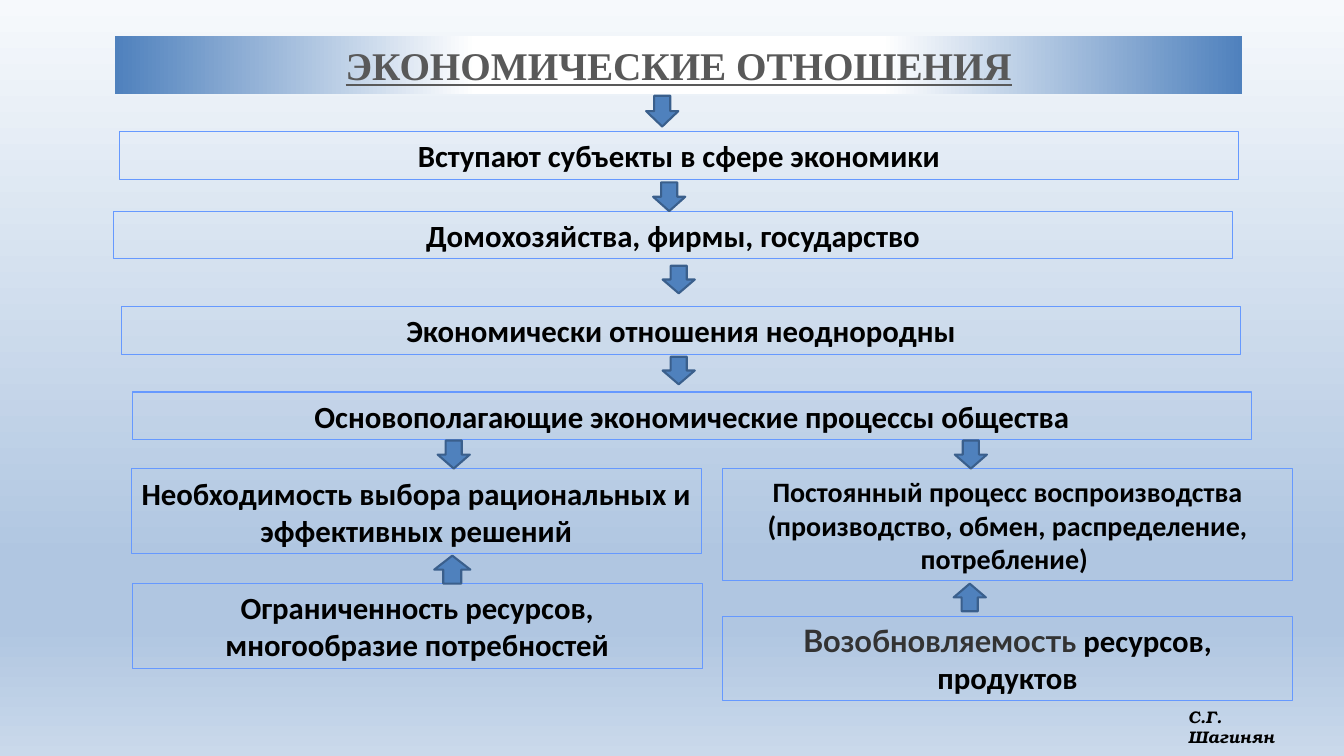
from lxml.etree import SubElement
from pptx import Presentation
from pptx.dml.color import RGBColor as Rgb
from pptx.enum.shapes import MSO_SHAPE as Shape
from pptx.enum.text import MSO_ANCHOR as Anchor, PP_ALIGN as Align
from pptx.oxml.ns import qn
from pptx.util import Pt

HUES = {
    "blue": "4F81BD", "edge": "3A5F8C", "frame": "6699FF", "white": "FFFFFF",
    "black": "000000", "grey": "595959", "dark": "333333",
    "sky": "F6F9FC", "mist": "B0C6E1", "haze": "CAD9EB",
}


def shade(fill, node, stops, angle):
    """Fill with a linear gradient of (percent, colour) stops."""
    fill.gradient()
    fill.gradient_angle = angle
    ramp = node.xpath(".//a:gsLst")[0]
    ramp.clear()
    for spot, hue in stops:
        stop = SubElement(ramp, qn("a:gs"), pos=str(spot * 1000))
        SubElement(stop, qn("a:srgbClr"), val=HUES[hue])


def write(shape, text, size=22, font="Calibri", hue="black", bold=True,
          italic=False, line=False, align=Align.CENTER, wrap=True):
    """Add a run of text to the shape."""
    frame = shape.text_frame
    frame.word_wrap = wrap
    frame.vertical_anchor = Anchor.MIDDLE
    para = frame.paragraphs[0]
    para.alignment = align
    run = para.add_run()
    run.text = text
    style = run.font
    style.name, style.size = font, Pt(size)
    style.bold, style.italic, style.underline = bold, italic, line
    style.color.rgb = Rgb.from_string(HUES[hue])


deck = Presentation()
deck.slide_width, deck.slide_height = Pt(960), Pt(540)
slide = deck.slides.add_slide(deck.slide_layouts[6])
shapes = slide.shapes

# Background
shade(slide.background.fill, slide.element,
      [(0, "sky"), (74, "mist"), (83, "mist"), (100, "haze")], 270)

# Title band
band = shapes.add_shape(Shape.RECTANGLE, Pt(82.3), Pt(26), Pt(805), Pt(41.2))
band.shadow.inherit = False
band.line.fill.background()
shade(band.fill, band.element,
      [(0, "blue"), (32, "white"), (68, "white"), (100, "blue")], 0)
write(band, "ЭКОНОМИЧЕСКИЕ ОТНОШЕНИЯ", size=28, font="Times New Roman",
      hue="grey", line=True)

# Framed steps: left, top, width, height, then runs with their format
WIDE, HALF = 799.4, 407
ROW, PAIR, TRIO = 34, 60.5, 80
steps = [
    (85.2, 94, WIDE, ROW, [("Вступают субъекты в сфере экономики", {})]),
    (81.1, 150.8, WIDE, ROW, [("Домохозяйства, фирмы, государство", {})]),
    (86.7, 219, WIDE, ROW, [("Экономически отношения неоднородны", {})]),
    (94.5, 280, WIDE, ROW,
     [("Основополагающие экономические процессы общества", {})]),
    (93.8, 335, HALF, PAIR,
     [("Необходимость выбора рациональных и эффективных решений", {})]),
    (516.2, 335, HALF, TRIO,
     [("Постоянный процесс воспроизводства (производство, обмен, "
       "распределение, потребление) ", {"size": 20})]),
    (94.5, 416.8, HALF, PAIR,
     [("Ограниченность ресурсов, многообразие потребностей", {})]),
    (516.2, 440.2, HALF, PAIR,
     [("Возобновляемость", {"font": "Lato", "hue": "dark"}),
      (" ресурсов, продуктов", {})]),
]
for left, top, width, height, runs in steps:
    box = shapes.add_shape(Shape.RECTANGLE, Pt(left), Pt(top),
                           Pt(width), Pt(height))
    box.shadow.inherit = False
    box.fill.background()
    box.line.color.rgb = Rgb.from_string(HUES["frame"])
    box.line.width = Pt(0.75)
    for text, look in runs:
        write(box, text, **look)

# Block arrows: kind, left, top, width, height
DOWN, UP = Shape.DOWN_ARROW, Shape.UP_ARROW
arrows = [
    (DOWN, 461.5, 68.4, 23, 22), (DOWN, 466.5, 130.3, 23, 20.5),
    (DOWN, 473.3, 189.8, 23, 19.7), (DOWN, 473.3, 254.8, 23, 19.7),
    (DOWN, 312.6, 314.7, 23, 20), (DOWN, 682, 314.7, 23, 20),
    (UP, 310.2, 396.9, 25.8, 20), (UP, 681.2, 416.9, 23, 19.7),
]
for kind, left, top, width, height in arrows:
    arrow = shapes.add_shape(kind, Pt(left), Pt(top), Pt(width), Pt(height))
    arrow.shadow.inherit = False
    arrow.fill.solid()
    arrow.fill.fore_color.rgb = Rgb.from_string(HUES["blue"])
    arrow.line.color.rgb = Rgb.from_string(HUES["edge"])
    arrow.line.width = Pt(1.5)

# Author
author = shapes.add_textbox(Pt(841.7), Pt(508.3), Pt(103.7), Pt(21.6))
write(author, "С.Г. Шагинян", size=12, font="TeX Gyre Bonum", italic=True,
      align=Align.LEFT, wrap=False)

deck.save("out.pptx")
